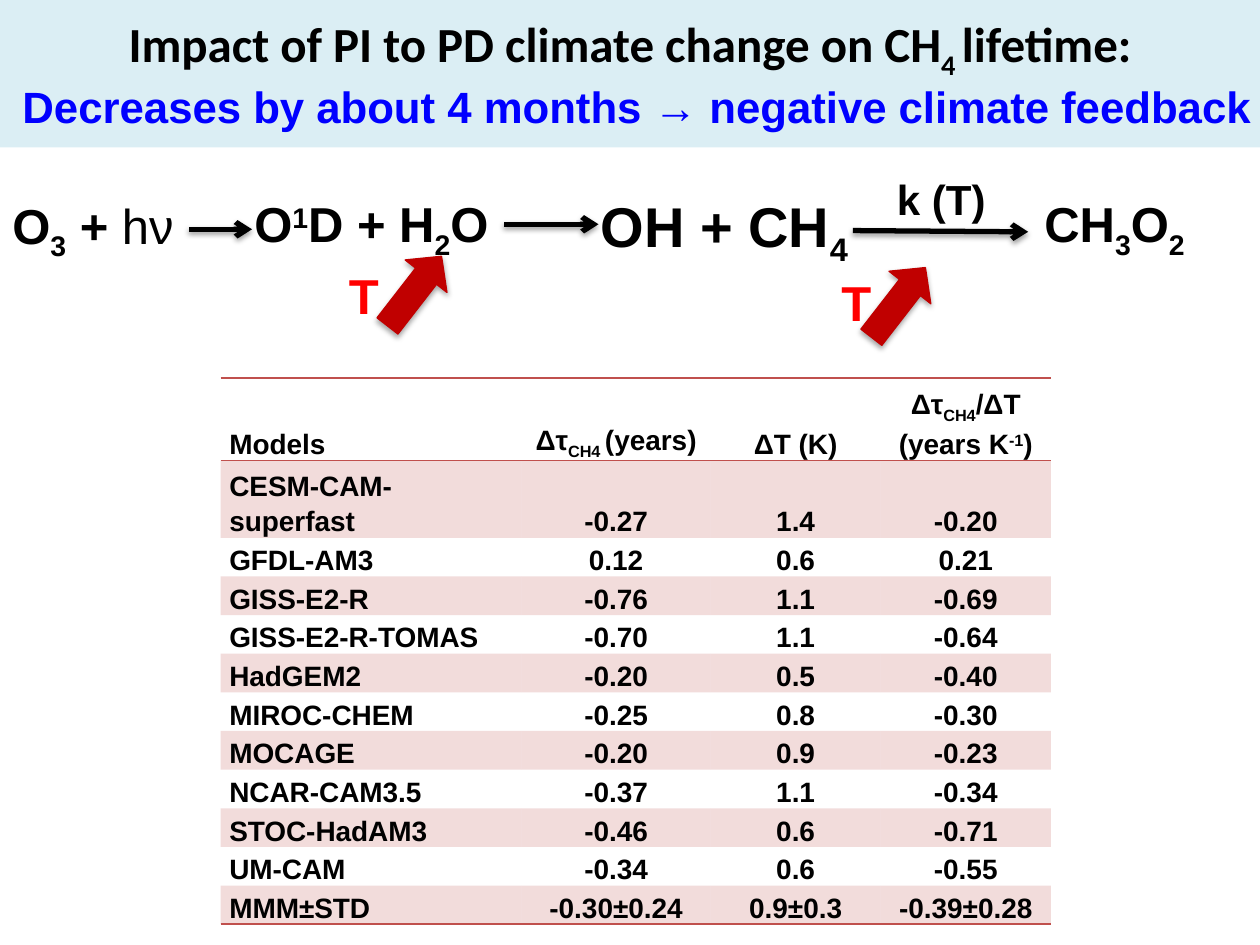
import dataclasses

import lxml.etree
import pptx
import pptx.dml.color
import pptx.enum.shapes
import pptx.enum.text
import pptx.oxml
import pptx.oxml.ns
import pptx.util

Inches = pptx.util.Inches
Pt = pptx.util.Pt
Align = pptx.enum.text.PP_ALIGN
Anchor = pptx.enum.text.MSO_ANCHOR
AutoSize = pptx.enum.text.MSO_AUTO_SIZE
qn = pptx.oxml.ns.qn

NO_GRID_STYLE = "{2D5ABB26-0587-4C30-8999-92F81FD0307C}"
MODELS = [
    ("Models", "Δτ~CH4 ~(years)", "ΔT (K)", "Δτ~CH4~/ΔT (years K^-1^)"),
    ("CESM-CAM-superfast", "-0.27", "1.4", "-0.20"),
    ("GFDL-AM3", "0.12", "0.6", "0.21"),
    ("GISS-E2-R", "-0.76", "1.1", "-0.69"),
    ("GISS-E2-R-TOMAS", "-0.70", "1.1", "-0.64"),
    ("HadGEM2", "-0.20", "0.5", "-0.40"),
    ("MIROC-CHEM", "-0.25", "0.8", "-0.30"),
    ("MOCAGE", "-0.20", "0.9", "-0.23"),
    ("NCAR-CAM3.5", "-0.37", "1.1", "-0.34"),
    ("STOC-HadAM3", "-0.46", "0.6", "-0.71"),
    ("UM-CAM", "-0.34", "0.6", "-0.55"),
    ("MMM±STD", "-0.30±0.24", "0.9±0.3", "-0.39±0.28"),
]


@dataclasses.dataclass(frozen=True)
class Theme:
    title_font: str = "Calibri"
    font: str = "Arial"
    ink: str = "000000"
    title_fill: str = "DBEEF4"
    message: str = "0000FF"
    temperature: str = "FF0000"
    arrow: str = "C00000"
    table: str = "C0504D"
    title_size: int = 28
    message_size: int = 25
    formula_size: int = 28
    reactant_size: int = 32
    rate_size: int = 24
    table_size: int = 16


def rgb(color):
    return pptx.dml.color.RGBColor.from_string(color)


def write(para, text, *, font, size, color, bold=True):
    """Add runs to para; ~text~ is subscript and ^text^ is superscript."""
    for low, piece in enumerate(text.split("~")):
        for high, part in enumerate(piece.split("^")):
            if not part:
                continue
            span = para.add_run()
            span.text = part
            span.font.name = font
            span.font.size = Pt(size)
            span.font.bold = bold
            span.font.color.rgb = rgb(color)
            baseline = -25000 if low % 2 else 30000 if high % 2 else 0
            if baseline:
                span._r.get_or_add_rPr().set("baseline", str(baseline))


def add_child(parent, tag, **attributes):
    child = lxml.etree.SubElement(parent, qn(tag))
    for name, value in attributes.items():
        child.set(name, str(value))
    return child


def add_shadow(effects, distance, alpha):
    shadow = add_child(effects, "a:outerShdw", blurRad=Pt(3.1), dist=Pt(distance),
                       dir=5400000, rotWithShape=0)
    add_child(add_child(shadow, "a:srgbClr", val="000000"), "a:alpha", val=alpha * 1000)


def add_border(cell, edge, color):
    line = pptx.oxml.parse_xml(
        f'<a:{edge} xmlns:a="http://schemas.openxmlformats.org/drawingml/2006/main" w="{Pt(1)}">'
        f'<a:solidFill><a:srgbClr val="{color}"/></a:solidFill></a:{edge}>')
    cell._tc.get_or_add_tcPr().insert(0, line)


class SlideBuilder:
    def __init__(self, page, theme):
        self.page = page
        self.theme = theme

    def group(self):
        return self.page.shapes.add_group_shape().shapes

    def title(self, text, left, top, width, height):
        theme = self.theme
        box = self.page.shapes.title
        box.left, box.top, box.width, box.height = map(Inches, (left, top, width, height))
        box.fill.solid()
        box.fill.fore_color.rgb = rgb(theme.title_fill)
        frame = box.text_frame
        frame.auto_size = AutoSize.NONE
        frame.vertical_anchor = Anchor.TOP
        frame.margin_top = Inches(0.11)
        para = frame.paragraphs[0]
        para.alignment = Align.CENTER
        write(para, text, font=theme.title_font, size=theme.title_size, color=theme.ink)

    def label(self, text, left, top, width, height, size, color=None, wrap=False, shapes=None):
        shapes = shapes or self.page.shapes
        box = shapes.add_textbox(*map(Inches, (left, top, width, height)))
        frame = box.text_frame
        frame.word_wrap = wrap
        frame.auto_size = AutoSize.SHAPE_TO_FIT_TEXT
        para = frame.paragraphs[0]
        write(para, text, font=self.theme.font, size=size, color=color or self.theme.ink)
        return para

    def reaction_arrow(self, start, end, shapes=None):
        shapes = shapes or self.page.shapes
        line = shapes.add_connector(pptx.enum.shapes.MSO_CONNECTOR.STRAIGHT,
                                    *map(Inches, start + end))
        line.line.color.rgb = rgb(self.theme.ink)
        line.line.width = Pt(3)
        add_child(line.line._get_or_add_ln(), "a:tailEnd", type="arrow")
        add_shadow(add_child(line._element.spPr, "a:effectLst"), 1.6, 38)

    def block_arrow(self, left, top, shapes):
        arrow = shapes.add_shape(pptx.enum.shapes.MSO_SHAPE.DOWN_ARROW,
                                 *map(Inches, (left, top, 0.42, 0.7)))
        arrow.rotation = 217.8
        arrow.adjustments[1] = 0.477
        arrow.fill.solid()
        arrow.fill.fore_color.rgb = rgb(self.theme.arrow)
        arrow.line.color.rgb = rgb(self.theme.arrow)
        arrow.line.width = Pt(0.75)
        arrow.shadow.inherit = False
        add_shadow(arrow._element.spPr.find(qn("a:effectLst")), 1.8, 35)

    def table(self, rows, left, top, column_widths, row_heights):
        frame = self.page.shapes.add_table(
            len(rows), len(column_widths), Inches(left), Inches(top),
            Inches(sum(column_widths)), Inches(sum(row_heights)))
        table = frame.table
        table._tbl.tblPr.find(qn("a:tableStyleId")).text = NO_GRID_STYLE
        for column, width in zip(table.columns, column_widths):
            column.width = Inches(width)
        for index, (row, height, texts) in enumerate(zip(table.rows, row_heights, rows)):
            row.height = Inches(height)
            for position, (cell, text) in enumerate(zip(row.cells, texts)):
                self.table_cell(cell, text, Align.CENTER if position else Align.LEFT, index % 2)
                if index in (0, len(rows) - 1):
                    add_border(cell, "a:lnB"[2:], self.theme.table)
                if index == 0:
                    add_border(cell, "lnT", self.theme.table)

    def table_cell(self, cell, text, alignment, banded):
        theme = self.theme
        cell.margin_left = cell.margin_right = Inches(0.07)
        cell.margin_top = cell.margin_bottom = 0
        cell.vertical_anchor = Anchor.BOTTOM
        if banded:
            cell.fill.solid()
            cell.fill.fore_color.rgb = rgb(theme.table)
            color = cell._tc.tcPr.find(".//" + qn("a:srgbClr"))
            add_child(color, "a:alpha", val=20000)
        else:
            cell.fill.background()
        para = cell.text_frame.paragraphs[0]
        para.alignment = alignment
        para.line_spacing = 1.15
        write(para, text, font=theme.font, size=theme.table_size, color=theme.ink)


def main():
    deck = pptx.Presentation()
    deck.slide_width, deck.slide_height = Inches(10), Inches(7.5)
    theme = Theme()
    slide = SlideBuilder(deck.slides.add_slide(deck.slide_layouts[5]), theme)

    slide.title("Impact of PI to PD climate change on CH~4 ~lifetime:", 0, 0, 10, 1.17)

    ozone = slide.label("O~3~ + ", 0, 1.5, 1.62, 0.57, theme.formula_size)
    write(ozone, "hν", font=theme.font, size=theme.formula_size, color=theme.ink, bold=False)
    slide.reaction_arrow((1.5, 1.82), (2, 1.82))
    slide.label("O^1^D + H~2~O", 1.92, 1.49, 2.23, 0.57, theme.formula_size)
    slide.reaction_arrow((4, 1.78), (4.75, 1.78))
    slide.label("OH + CH~4~", 4.67, 1.47, 2.2, 0.64, theme.reactant_size)

    product = slide.group()
    slide.label("k (T)", 7.02, 1.33, 1, 0.5, theme.rate_size, shapes=product)
    slide.reaction_arrow((6.77, 1.83), (8.16, 1.84), shapes=product)
    slide.label("CH~3~O~2~", 8.19, 1.49, 1.65, 0.57, theme.formula_size,
                wrap=True, shapes=product)

    warming = slide.group()
    for label_left, label_top, arrow_left, arrow_top in ((2.67, 2.06, 3.08, 1.96),
                                                         (6.58, 2.11, 6.92, 2.05)):
        slide.label("T", label_left, label_top, 0.44, 0.57, theme.formula_size,
                    theme.temperature, shapes=warming)
        slide.block_arrow(arrow_left, arrow_top, warming)

    slide.table(MODELS, 1.75, 3, [2.39, 1.5, 1.35, 1.35], [0.57] + [0.24] * (len(MODELS) - 1))
    slide.label("Decreases by about 4 months → negative climate feedback",
                0.08, 0.58, 10.05, 0.52, theme.message_size, theme.message)
    deck.save("out.pptx")


if __name__ == "__main__":
    main()
